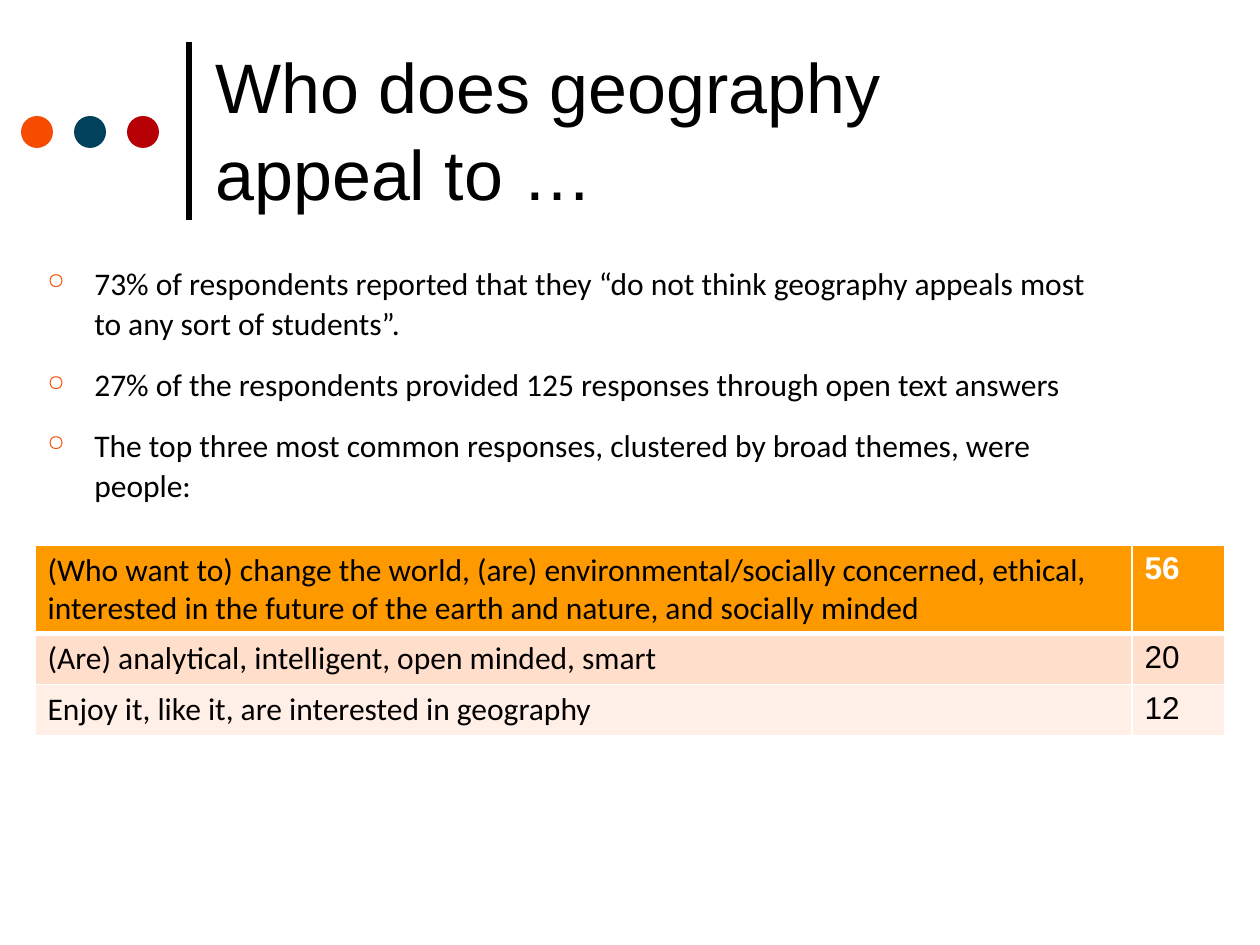
from dataclasses import dataclass

from lxml import etree
from pptx import Presentation
from pptx.dml.color import RGBColor
from pptx.enum.shapes import MSO_CONNECTOR, MSO_SHAPE
from pptx.enum.text import MSO_ANCHOR
from pptx.oxml.ns import qn
from pptx.util import Pt

LINE, OVAL, TOP = MSO_CONNECTOR.STRAIGHT, MSO_SHAPE.OVAL, MSO_ANCHOR.TOP
SCALE = 914400 / 126
COLORS = {
    "black": "000000", "white": "FFFFFF", "orange": "F54C00",
    "teal": "01415B", "red": "B70005", "amber": "FF9900",
    "peach": "FFDECC", "cream": "FFEFE7",
}


@dataclass
class Box:
    left: int
    top: int
    width: int
    height: int

    def emu(self) -> list[int]:
        return [px(n) for n in (self.left, self.top, self.width, self.height)]


@dataclass
class Row:
    theme: str
    count: str
    fill: str
    height: int
    ink: str = "black"
    bold: bool = False
    above: int = 1
    below: int = 1


DOTS = ["orange", "teal", "red"]
POINTS = [
    "73% of respondents reported that they “do not think geography appeals most to any sort of students”.",
    "27% of the respondents provided 125 responses through open text answers",
    "The top three most common responses, clustered by broad themes, were people:",
]
ROWS = [
    Row("(Who want to) change the world, (are) environmental/socially concerned, ethical, "
        "interested in the future of the earth and nature, and socially minded",
        "56", "amber", 88, ink="white", bold=True, below=3),
    Row("(Are) analytical, intelligent, open minded, smart", "20", "peach", 51, above=3),
    Row("Enjoy it, like it, are interested in geography", "12", "cream", 51),
]


def px(n: int) -> int:
    return round(n * SCALE)


def rgb(name: str) -> RGBColor:
    return RGBColor.from_string(COLORS[name])


def add_run(para, text: str, face: str, size: int, ink="black", bold=False) -> None:
    run = para.add_run()
    run.text = text
    font = run.font
    font.name, font.size, font.bold = face, Pt(size), bold
    font.color.rgb = rgb(ink)


def add_frame(slide, box: Box):
    frame = slide.shapes.add_textbox(*box.emu()).text_frame
    frame.word_wrap = True
    frame.vertical_anchor = TOP
    return frame


def add_bullet(para) -> None:
    props = para._p.get_or_add_pPr()
    props.set("marL", str(px(47)))
    props.set("indent", str(-px(47)))
    tint = etree.SubElement(props, qn("a:buClr"))
    etree.SubElement(tint, qn("a:srgbClr"), val=COLORS["orange"])
    etree.SubElement(props, qn("a:buSzPct"), val="70000")
    etree.SubElement(props, qn("a:buChar"), char="○")


def add_rule(slide) -> None:
    rule = slide.shapes.add_connector(LINE, px(189), px(220), px(189), px(42))
    rule.line.color.rgb = rgb("black")
    rule.line.width = Pt(3)
    etree.SubElement(rule._element.spPr, qn("a:effectLst"))


def add_dot(slide, box: Box, fill: str) -> None:
    dot = slide.shapes.add_shape(OVAL, *box.emu())
    dot.shadow.inherit = False
    dot.fill.solid()
    dot.fill.fore_color.rgb = rgb(fill)
    dot.line.fill.background()


def add_title(slide) -> None:
    frame = add_frame(slide, Box(203, 26, 753, 198))
    frame.margin_top = px(14)
    para = frame.paragraphs[0]
    para.line_spacing = 1.04
    add_run(para, "Who does geography appeal to …", "Arial", 40)


def add_points(slide) -> None:
    frame = add_frame(slide, Box(35, 255, 1081, 576))
    for i, text in enumerate(POINTS):
        para = frame.add_paragraph() if i else frame.paragraphs[0]
        add_bullet(para)
        para.line_spacing = 1.07
        para.space_before = Pt(3.6 if i else 0)
        para.space_after = Pt(8)
        add_run(para, text, "Calibri", 18)


def set_edges(cell, row: Row) -> None:
    props = cell._tc.get_or_add_tcPr()
    for side, width in zip("LRTB", (1, 1, row.above, row.below)):
        edge = etree.SubElement(props, qn(f"a:ln{side}"), w=str(Pt(width)))
        fill = etree.SubElement(edge, qn("a:solidFill"))
        etree.SubElement(fill, qn("a:srgbClr"), val=COLORS["white"])


def add_themes(slide) -> None:
    box = Box(35, 545, 1190, sum(row.height for row in ROWS))
    table = slide.shapes.add_table(len(ROWS), 2, *box.emu()).table
    for col, width in zip(table.columns, (1097, 93)):
        col.width = px(width)
    for i, row in enumerate(ROWS):
        table.rows[i].height = px(row.height)
        theme, count = table.cell(i, 0), table.cell(i, 1)
        for cell in (theme, count):
            set_edges(cell, row)
            cell.fill.solid()
            cell.fill.fore_color.rgb = rgb(row.fill)
        add_run(theme.text_frame.paragraphs[0], row.theme, "Calibri", 18)
        add_run(count.text_frame.paragraphs[0], row.count, "Arial", 18, row.ink, row.bold)


def main() -> None:
    deck = Presentation()
    deck.slide_width, deck.slide_height = px(1260), px(945)
    slide = deck.slides.add_slide(deck.slide_layouts[6])
    add_rule(slide)
    for i, fill in enumerate(DOTS):
        add_dot(slide, Box(21 + 53 * i, 116, 32, 32), fill)
    add_title(slide)
    add_points(slide)
    add_themes(slide)
    deck.save("out.pptx")


if __name__ == "__main__":
    main()
